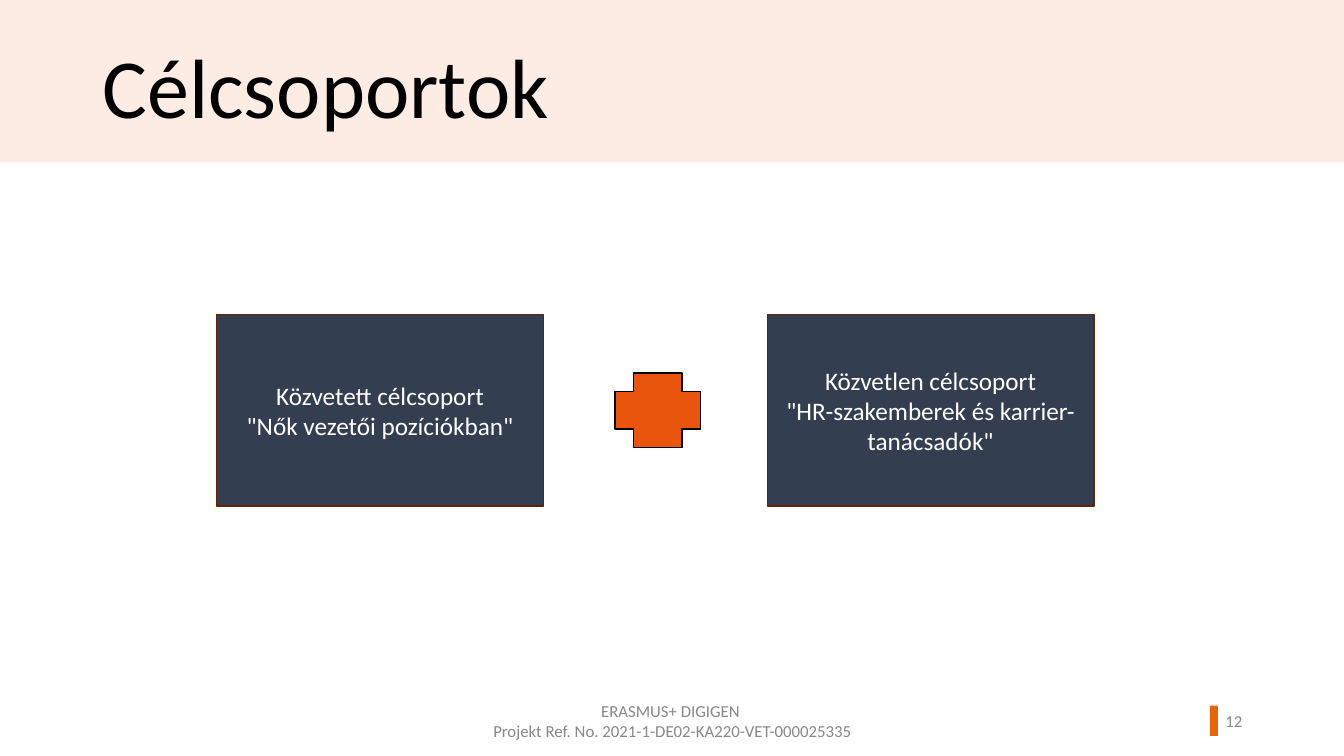
from pptx import Presentation
from pptx.dml.color import RGBColor
from pptx.enum.shapes import MSO_SHAPE
from pptx.enum.text import MSO_ANCHOR, PP_ALIGN
from pptx.util import Emu, Pt

EMU_PER_PX = 9144  # 100 px to the inch

WHITE = RGBColor(0xFF, 0xFF, 0xFF)
BLACK = RGBColor(0x00, 0x00, 0x00)
PEACH = RGBColor(0xFD, 0xEC, 0xE3)
ORANGE = RGBColor(0xE8, 0x65, 0x07)
PLUS_ORANGE = RGBColor(0xE9, 0x55, 0x0D)
NAVY = RGBColor(0x33, 0x3F, 0x50)
BROWN = RGBColor(0x62, 0x23, 0x05)
GRAY = RGBColor(0x88, 0x88, 0x88)


def px(value):
    return Emu(value * EMU_PER_PX)


def write_text(box, paragraphs, size, color, align, anchor=MSO_ANCHOR.MIDDLE, spacing=None):
    """Fill a box with equally formatted paragraphs; \\v breaks a line."""
    frame = box.text_frame
    frame.word_wrap = True
    frame.vertical_anchor = anchor
    for index, text in enumerate(paragraphs):
        para = frame.paragraphs[0] if index == 0 else frame.add_paragraph()
        para.text = text
        para_format = {"alignment": align, "line_spacing": spacing}
        for name, value in para_format.items():
            setattr(para, name, value)
        for span in para.runs:
            span_format = {"name": "Calibri", "size": Pt(size)}
            for name, value in span_format.items():
                setattr(span.font, name, value)
            span.font.color.rgb = color


def add_label(page, bounds, paragraphs, *text_format, **text_options):
    box = page.shapes.add_textbox(*map(px, bounds))
    write_text(box, paragraphs, *text_format, **text_options)


def add_block(page, kind, bounds, fill, line=None):
    block = page.shapes.add_shape(kind, *map(px, bounds))
    block.shadow.inherit = False
    block.fill.solid()
    block.fill.fore_color.rgb = fill
    if line is None:
        block.line.fill.background()
    else:
        block.line.color.rgb = line
        block.line.width = Pt(1)
    return block


def add_target_group(page, left, paragraphs):
    card = add_block(page, MSO_SHAPE.RECTANGLE, (left, 312, 324, 190), NAVY, BROWN)
    write_text(card, paragraphs, 18, WHITE, PP_ALIGN.CENTER)


def main():
    deck = Presentation()
    deck.slide_width, deck.slide_height = px(1333), px(750)
    page = deck.slides.add_slide(deck.slide_layouts[6])

    # Title band and page number marker
    add_block(page, MSO_SHAPE.RECTANGLE, (0, 0, 1333, 161), PEACH)
    add_block(page, MSO_SHAPE.RECTANGLE, (1200, 700, 8, 30), ORANGE)

    # Title
    add_label(page, (92, 41, 993, 85), ["Célcsoportok"], 60, BLACK, PP_ALIGN.LEFT,
              anchor=MSO_ANCHOR.TOP, spacing=0.9)

    # Footer
    add_label(page, (1177, 695, 65, 40), ["12"], 12, GRAY, PP_ALIGN.RIGHT)
    add_label(page, (442, 695, 450, 40),
              ["ERASMUS+ DIGIGEN \vProjekt Ref. No. 2021-1-DE02-KA220-VET-000025335"],
              12, GRAY, PP_ALIGN.CENTER)

    # Two target groups joined by a plus
    add_target_group(page, 215, ["Közvetett célcsoport", '"Nők vezetői pozíciókban"'])
    add_target_group(page, 761, ["Közvetlen célcsoport",
                                 '"HR-szakemberek és karrier-tanácsadók"'])
    plus = add_block(page, MSO_SHAPE.CROSS, (610, 370, 85, 74), PLUS_ORANGE, BLACK)
    plus.adjustments[0] = 0.25

    deck.save("out.pptx")


if __name__ == "__main__":
    main()
